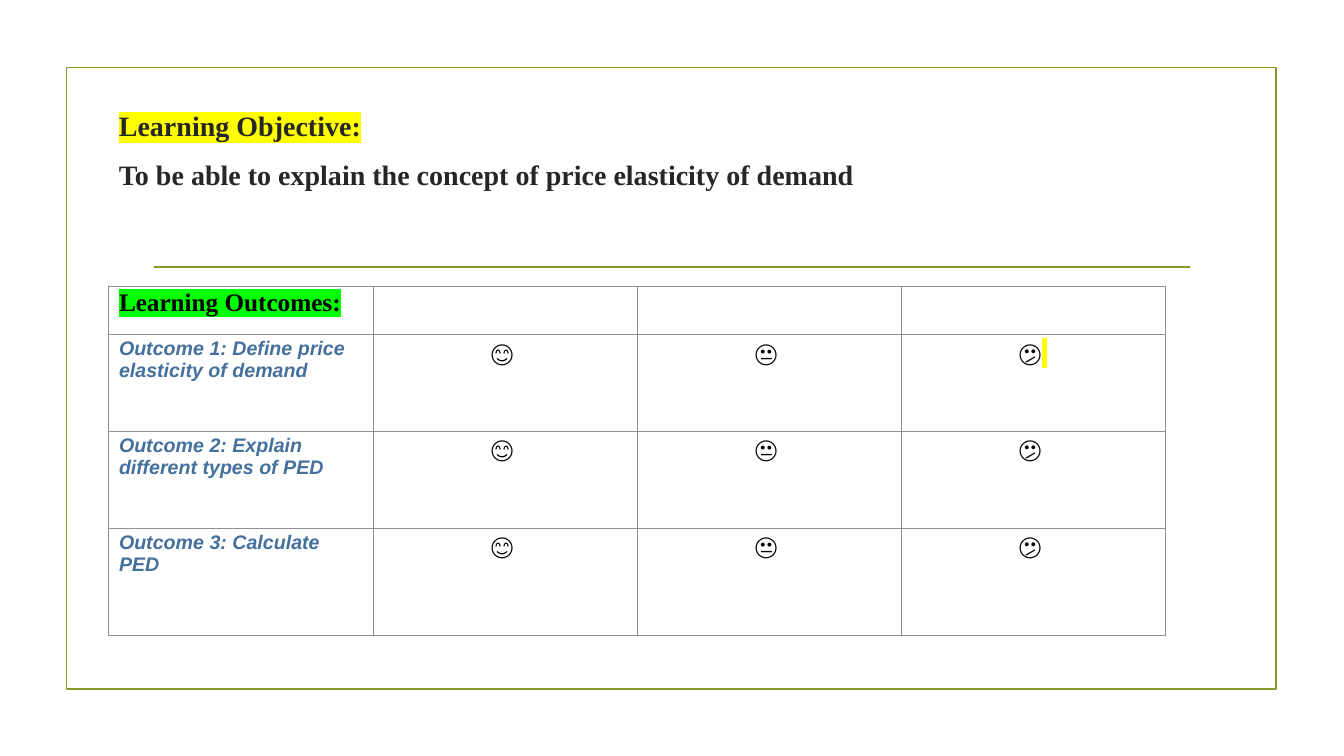
from pptx import Presentation
from pptx.dml.color import RGBColor
from pptx.enum.shapes import MSO_CONNECTOR as Connector, MSO_SHAPE as Shape
from pptx.enum.text import PP_ALIGN as Align
from pptx.oxml import parse_xml
from pptx.oxml.ns import nsdecls, qn
from pptx.util import Pt

COLORS = {
    "olive": "83992A", "ink": "262626", "black": "000000", "blue": "44709D",
    "grid": "909090", "yellow": "FFFF00", "green": "00FF00",
}
SERIF, SANS, FACE = "Times New Roman", "Arial", "Cabin"


class SlideBuilder:
    """Holds the colours and the slide that is being built."""

    def __init__(self, slide, colors):
        self.slide = slide
        self.colors = colors

    def rgb(self, color):
        return RGBColor.from_string(self.colors[color])

    def frame(self, left, top, width, height, color, weight):
        frame = self.slide.shapes.add_shape(
            Shape.RECTANGLE, Pt(left), Pt(top), Pt(width), Pt(height))
        frame.shadow.inherit = False
        frame.fill.background()
        frame.line.color.rgb = self.rgb(color)
        frame.line.width = Pt(weight)

    def rule(self, left, right, y, color, weight):
        rule = self.slide.shapes.add_connector(
            Connector.STRAIGHT, Pt(left), Pt(y), Pt(right), Pt(y))
        rule.line.color.rgb = self.rgb(color)
        rule.line.width = Pt(weight)
        rule._element.spPr.append(parse_xml(f"<a:effectLst {nsdecls('a')}/>"))

    def style(self, run, font, size, color, bold=True, italic=False, highlight=None):
        run.font.name, run.font.size = font, Pt(size)
        run.font.bold, run.font.italic = bold, italic
        run.font.color.rgb = self.rgb(color)
        if highlight:
            fill = run._r.get_or_add_rPr().find(qn("a:solidFill"))
            fill.addnext(parse_xml(
                f'<a:highlight {nsdecls("a")}>'
                f'<a:srgbClr val="{self.colors[highlight]}"/></a:highlight>'))

    def text(self, left, top, width, height):
        box = self.slide.shapes.add_textbox(Pt(left), Pt(top), Pt(width), Pt(height))
        box.text_frame.word_wrap = True
        return box.text_frame

    def table(self, left, top, column_width, columns, row_heights):
        table = self.slide.shapes.add_table(
            len(row_heights), columns, Pt(left), Pt(top),
            Pt(column_width * columns), Pt(sum(row_heights))).table
        table.first_row = table.horz_banding = False
        for column in table.columns:
            column.width = Pt(column_width)
        for row, height in zip(table.rows, row_heights):
            row.height = Pt(height)
        for cell in table.iter_cells():
            cell.margin_top = cell.margin_bottom = Pt(2.2)
            cell.fill.background()
            self.borders(cell, "grid", 0.75)
        return table

    def borders(self, cell, color, weight):
        properties = cell._tc.get_or_add_tcPr()
        for index, side in enumerate("LRTB"):
            properties.insert(index, parse_xml(
                f'<a:ln{side} {nsdecls("a")} w="{Pt(weight)}"><a:solidFill>'
                f'<a:srgbClr val="{self.colors[color]}"/></a:solidFill></a:ln{side}>'))

    def cell_text(self, cell, text, align=Align.LEFT, **style):
        paragraph = cell.text_frame.paragraphs[0]
        paragraph.text = text
        paragraph.alignment = align
        self.style(paragraph.runs[0], **style)
        return paragraph


def main():
    prs = Presentation()
    prs.slide_width, prs.slide_height = Pt(960), Pt(540)
    builder = SlideBuilder(prs.slides.add_slide(prs.slide_layouts[6]), COLORS)

    # Border and divider
    builder.frame(47.5, 48.2, 864, 444.2, "olive", 1.25)
    builder.rule(110.2, 850.3, 190.8, "olive", 1.25)

    # Learning objective
    objective = builder.text(77.8, 74, 716.4, 130.5)
    objective.text = ("Learning Objective:\n"
                      "To be able to explain the concept of price elasticity of demand")
    heading, aim = objective.paragraphs
    heading.space_after = aim.space_after = Pt(6)
    aim.space_before = Pt(5)
    builder.style(heading.runs[0], SERIF, 20, "ink", highlight="yellow")
    builder.style(aim.runs[0], SERIF, 20, "ink")

    # Learning outcomes with self-rating faces
    outcomes = [
        "Outcome 1: Define price elasticity of demand",
        "Outcome 2: Explain different types of PED",
        "Outcome 3: Calculate PED",
    ]
    faces = ["😊 ", "😐 ", "😕 "]
    face_style = dict(font=FACE, size=18, color="black")
    table = builder.table(77.8, 204.5, 188.6, 4, [34.5, 69.3, 69.3, 76.6])
    builder.cell_text(table.cell(0, 0), "Learning Outcomes:",
                      font=SERIF, size=18, color="black", highlight="green")
    for row, outcome in enumerate(outcomes, 1):
        builder.cell_text(table.cell(row, 0), outcome,
                          font=SANS, size=14, color="blue", italic=True)
        for column, face in enumerate(faces, 1):
            marked = (row, column) == (1, 3)
            rating = builder.cell_text(table.cell(row, column),
                                       face[0] if marked else face,
                                       Align.CENTER, **face_style)
            if marked:
                mark = rating.add_run()
                mark.text = face[1]
                builder.style(mark, bold=False, highlight="yellow", **face_style)

    prs.save("out.pptx")


if __name__ == "__main__":
    main()
